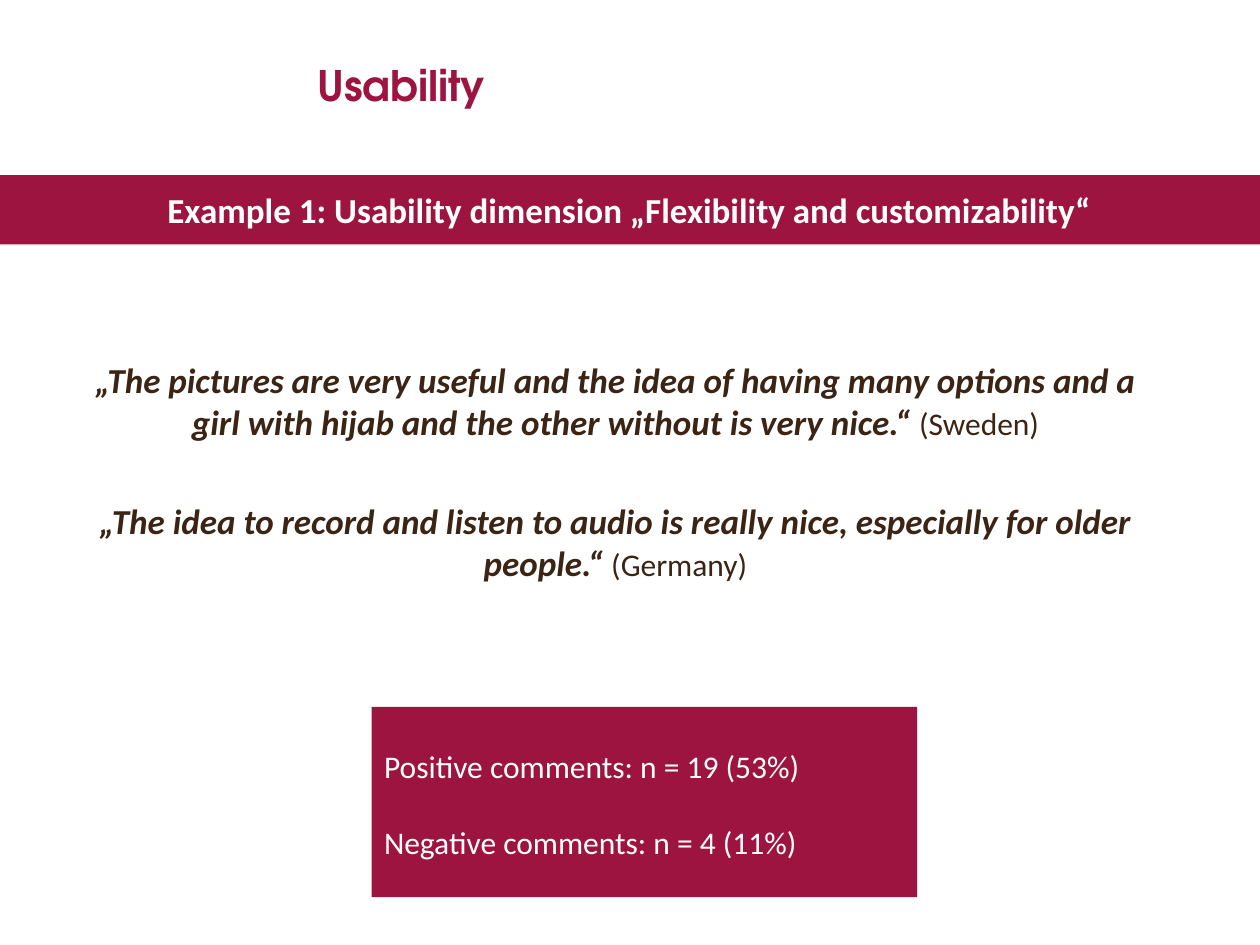
from dataclasses import dataclass

from pptx import Presentation
from pptx.dml.color import RGBColor
from pptx.enum.shapes import MSO_SHAPE
from pptx.enum.text import MSO_ANCHOR, PP_ALIGN
from pptx.util import Inches, Pt


@dataclass(frozen=True)
class Theme:
    crimson: RGBColor = RGBColor(0x9E, 0x14, 0x40)
    brown: RGBColor = RGBColor(0x3C, 0x24, 0x15)
    white: RGBColor = RGBColor(0xFF, 0xFF, 0xFF)
    title_font: str = "TeX Gyre Adventor"
    body_font: str = "Calibri"
    title_size: int = 24
    lead_size: int = 20
    body_size: int = 18


class SlideBuilder:
    """Places styled elements; areas are (left, top, width, height) in percent of the slide."""

    def __init__(self, presentation, theme):
        self.presentation = presentation
        self.theme = theme
        self.slide = presentation.slides.add_slide(presentation.slide_layouts[6])

    def place(self, area):
        width, height = self.presentation.slide_width, self.presentation.slide_height
        return [int(share * side / 100) for share, side in zip(area, (width, height) * 2)]

    def style(self, run, size, color, font=None, bold=False, italic=False):
        run.font.name = font or self.theme.body_font
        run.font.size = Pt(size)
        run.font.color.rgb = color
        run.font.bold = bold
        run.font.italic = italic

    def text_frame(self, area):
        frame = self.slide.shapes.add_textbox(*self.place(area)).text_frame
        frame.word_wrap = True
        return frame

    def panel(self, area):
        """Add a crimson rectangle and return its text frame."""
        shape = self.slide.shapes.add_shape(MSO_SHAPE.RECTANGLE, *self.place(area))
        shape.shadow.inherit = False
        shape.fill.solid()
        shape.fill.fore_color.rgb = self.theme.crimson
        shape.line.fill.background()
        shape.text_frame.word_wrap = True
        return shape.text_frame

    def paragraphs(self, frame, count, alignment, gap):
        """Yield aligned paragraphs with a gap in points between them."""
        for index in range(count):
            paragraph = frame.add_paragraph() if index else frame.paragraphs[0]
            paragraph.alignment = alignment
            if index:
                paragraph.space_before = Pt(gap)
            yield paragraph

    def title(self, text, area):
        frame = self.text_frame(area)
        frame.text = text
        self.style(frame.paragraphs[0].runs[0], self.theme.title_size,
                   self.theme.crimson, self.theme.title_font, bold=True)

    def banner(self, text, area):
        frame = self.panel(area)
        frame.vertical_anchor = MSO_ANCHOR.MIDDLE
        frame.text = text
        paragraph = frame.paragraphs[0]
        paragraph.alignment = PP_ALIGN.CENTER
        self.style(paragraph.runs[0], self.theme.lead_size, self.theme.white, bold=True)

    def quotes(self, quotes, area):
        frame = self.text_frame(area)
        rows = self.paragraphs(frame, len(quotes), PP_ALIGN.CENTER, gap=32)
        for paragraph, (quote, country) in zip(rows, quotes):
            paragraph.text = f"„{quote}“ "
            self.style(paragraph.runs[0], self.theme.lead_size, self.theme.brown,
                       bold=True, italic=True)
            source = paragraph.add_run()
            source.text = f"({country})"
            self.style(source, self.theme.body_size, self.theme.brown)

    def counts(self, counts, area):
        frame = self.panel(area)
        frame.vertical_anchor = MSO_ANCHOR.TOP
        frame.margin_top = Inches(0.32)
        rows = self.paragraphs(frame, len(counts), PP_ALIGN.LEFT, gap=22)
        for paragraph, (label, number, percent) in zip(rows, counts):
            paragraph.text = f"{label} comments: n = {number} ({percent}%)"
            self.style(paragraph.runs[0], self.theme.body_size, self.theme.white)


def main():
    presentation = Presentation()
    presentation.slide_width = Inches(10)
    presentation.slide_height = Inches(7.5)

    builder = SlideBuilder(presentation, Theme())
    builder.title("Usability", (24.2, 5.6, 70, 14.4))
    builder.banner("Example 1: Usability dimension „Flexibility and customizability“",
                   (-0.1, 18.53, 100.1, 7.33))
    builder.quotes([
        ("The pictures are very useful and the idea of having many options and a girl "
         "with hijab and the other without is very nice.", "Sweden"),
        ("The idea to record and listen to audio is really nice, especially for older "
         "people.", "Germany"),
    ], (4.8, 37.33, 88.1, 42.67))
    builder.counts([("Positive", 19, 53), ("Negative", 4, 11)],
                   (29.5, 74.8, 43.3, 20.13))

    presentation.save("out.pptx")


if __name__ == "__main__":
    main()
